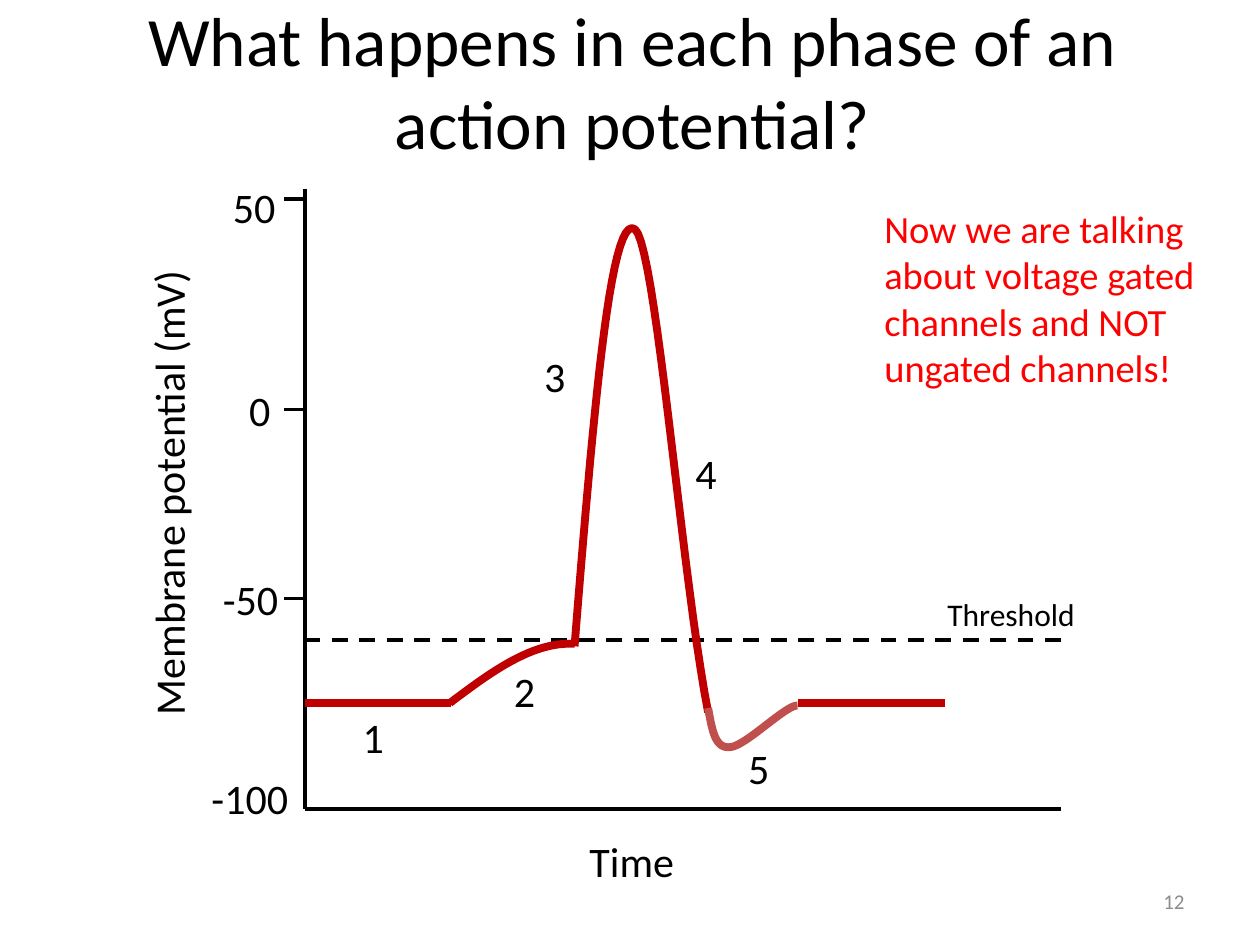
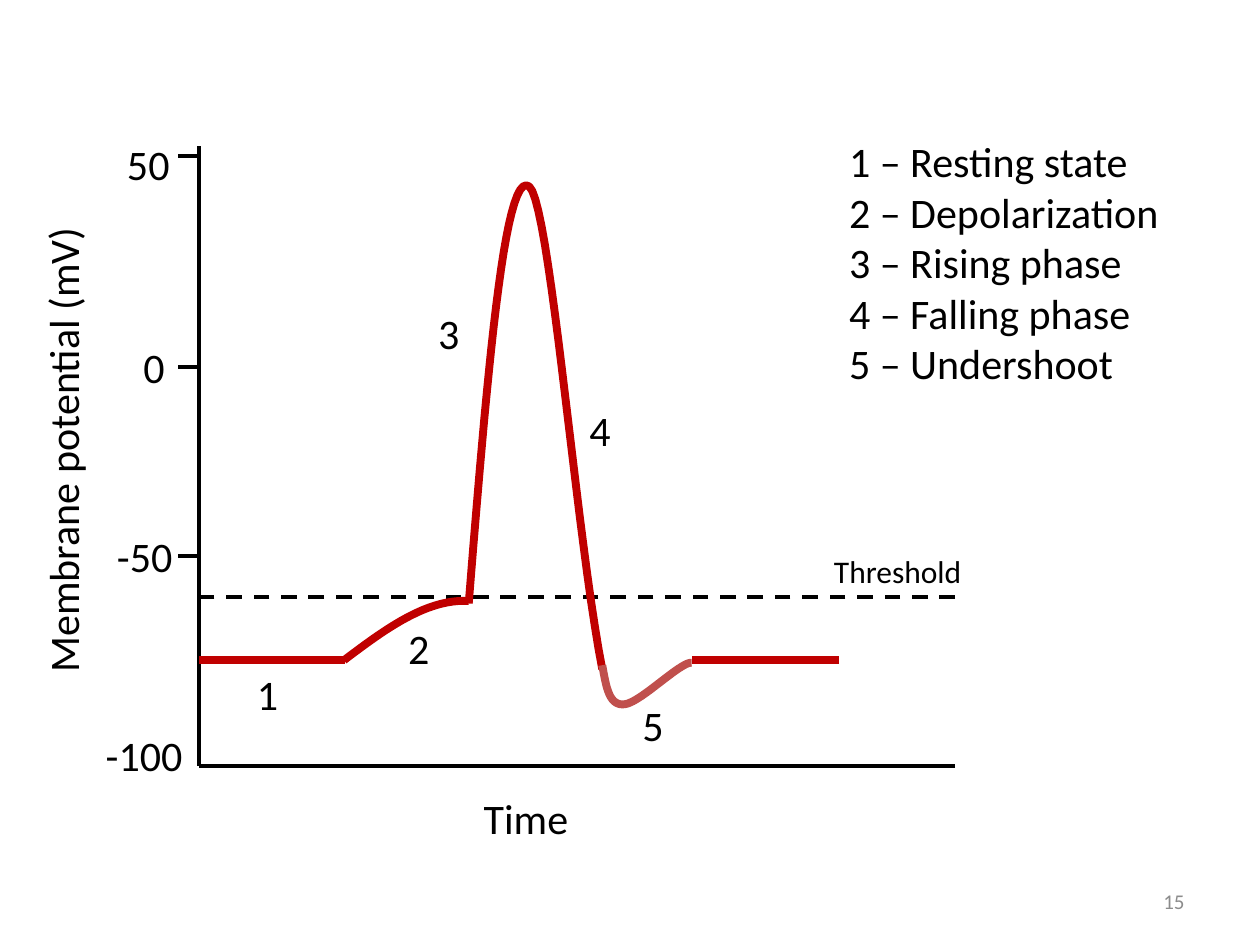
from pptx import Presentation
from pptx.dml.color import RGBColor
from pptx.enum.dml import MSO_LINE
from pptx.enum.shapes import MSO_CONNECTOR, MSO_SHAPE
from pptx.enum.text import MSO_ANCHOR, MSO_AUTO_SIZE, PP_ALIGN
from pptx.oxml.xmlchemy import OxmlElement
from pptx.util import Inches, Pt

BLACK = RGBColor(0x00, 0x00, 0x00)
WHITE = RGBColor(0xFF, 0xFF, 0xFF)
GRAY = RGBColor(0x8C, 0x8C, 0x8C)
RED = RGBColor(0xFF, 0x00, 0x00)
DARK_RED = RGBColor(0xC0, 0x00, 0x00)
SOFT_RED = RGBColor(0xC0, 0x50, 0x4D)
FONT = "Calibri"
AXIS_WIDTH, CURVE_WIDTH = 2.25, 4.5
CURVE_STEPS = 24

# Graph geometry in inches, measured from the corner of the axes
AXIS_LENGTH, AXIS_HEIGHT, TICK = 6, 4.92, 0.17
RESTING_Y, THRESHOLD_Y = -0.84, -1.34
TICKS = [-1.67, -3.17, -4.84]
SCALE_LABELS = [("-100", -0.84, -0.34, 0.82), ("-50", -0.75, -1.92, 0.65),
                ("0", -0.54, -3.42, 0.37), ("50", -0.67, -5.03, 0.54)]
PHASE_LABELS = [("1", 0.36, -0.82), ("2", 1.56, -1.19), ("3", 1.8, -3.69),
                ("4", 3, -2.92), ("5", 3.42, -0.58)]

# Bezier curves: a start point, then three points for each segment
DEPOLARIZATION = [(1.15, -0.84), (1.48, -1.09), (1.81, -1.33), (2.14, -1.31)]
SPIKE = [(2.14, -1.29), (2.28, -3.02), (2.42, -4.75), (2.62, -4.6),
         (2.81, -4.45), (3.05, -1.03), (3.29, -0.42)]
UNDERSHOOT = [(3.2, -0.8), (3.23, -0.64), (3.25, -0.48), (3.37, -0.49),
              (3.49, -0.49), (3.82, -0.83), (3.91, -0.82)]


def bezier_points(points):
    """Return points along a chain of cubic Bezier segments."""
    result = [points[0]]
    for i in range(0, len(points) - 1, 3):
        segment = points[i:i + 4]
        for step in range(1, CURVE_STEPS + 1):
            t = step / CURVE_STEPS
            weights = ((1 - t) ** 3, 3 * t * (1 - t) ** 2, 3 * t * t * (1 - t), t ** 3)
            result.append(tuple(sum(w * pt[axis] for w, pt in zip(weights, segment))
                                for axis in (0, 1)))
    return result


class Deck:
    def __init__(self):
        self.prs = Presentation()
        self.prs.slide_width, self.prs.slide_height = Inches(10), Inches(7.5)
        self.s = None
        self.origin = (0, 0)

    def new_slide(self, number):
        self.s = self.prs.slides.add_slide(self.prs.slide_layouts[6])
        self.origin = (0, 0)
        self.text(str(number), 7.17, 6.95, 2.33, 0.4, size=12, color=GRAY,
                  align=PP_ALIGN.RIGHT, anchor=MSO_ANCHOR.MIDDLE, wrap=True)

    def place(self, x, y):
        return Inches(self.origin[0] + x), Inches(self.origin[1] + y)

    def text(self, text, x, y, w, h=0.5, size=24, color=BLACK, align=PP_ALIGN.LEFT,
             anchor=MSO_ANCHOR.TOP, wrap=False, rotation=0):
        sp = self.s.shapes.add_textbox(*self.place(x, y), Inches(w), Inches(h))
        sp.rotation = rotation
        tf = sp.text_frame
        tf.word_wrap = wrap
        tf.auto_size = MSO_AUTO_SIZE.NONE if wrap else MSO_AUTO_SIZE.SHAPE_TO_FIT_TEXT
        tf.vertical_anchor = anchor
        tf.text = text
        for p in tf.paragraphs:
            p.alignment = align
            for r in p.runs:
                r.font.name, r.font.size = FONT, Pt(size)
                r.font.color.rgb = color

    def title(self, text):
        self.text(text, 0.52, 0.01, 9, 1.25, size=39.6, align=PP_ALIGN.CENTER,
                  anchor=MSO_ANCHOR.MIDDLE, wrap=True)

    def line(self, x1, y1, x2, y2, color=BLACK, width=AXIS_WIDTH, dash=None):
        sp = self.s.shapes.add_connector(MSO_CONNECTOR.STRAIGHT,
                                         *self.place(x1, y1), *self.place(x2, y2))
        sp.line.color.rgb = color
        sp.line.width = Pt(width)
        if dash:
            sp.line.dash_style = dash
        sp._element.spPr.append(OxmlElement("a:effectLst"))

    def curve(self, points, color=DARK_RED):
        start, *rest = [self.place(x, y) for x, y in bezier_points(points)]
        builder = self.s.shapes.build_freeform(*start)
        builder.add_line_segments(rest, close=False)
        sp = builder.convert_to_shape()
        sp.shadow.inherit = False
        sp.fill.background()
        sp.line.color.rgb = color
        sp.line.width = Pt(CURVE_WIDTH)

    def box(self, x, y, w, h, color):
        sp = self.s.shapes.add_shape(MSO_SHAPE.RECTANGLE, *self.place(x, y),
                                     Inches(w), Inches(h))
        sp.shadow.inherit = False
        sp.fill.solid()
        sp.fill.fore_color.rgb = color
        sp.line.color.rgb = color
        sp.line.width = Pt(2)

    def action_potential(self, left, bottom, threshold_label_x):
        self.origin = (left, bottom)

        # Axes, ticks and threshold
        self.line(0, -AXIS_HEIGHT, 0, 0)
        self.line(AXIS_LENGTH, 0, 0, 0)
        self.line(AXIS_LENGTH, THRESHOLD_Y, 0, THRESHOLD_Y, dash=MSO_LINE.DASH)
        for y in TICKS:
            self.line(0, y, -TICK, y)

        # Axis labels
        self.text("Time", 2.16, 0.16, 0.88)
        self.text("Membrane potential (mV)", -2.97, -2.78, 3.77, rotation=270)
        for label, x, y, w in SCALE_LABELS:
            self.text(label, x, y, w)

        # Membrane potential, with the end of the spike masked by the undershoot
        self.line(1.16, RESTING_Y, 0, RESTING_Y, DARK_RED, CURVE_WIDTH)
        self.curve(DEPOLARIZATION)
        self.curve(SPIKE)
        self.box(3, -0.75, 0.5, 0.5, WHITE)
        self.line(5.08, RESTING_Y, 3.91, RESTING_Y, DARK_RED, CURVE_WIDTH)
        self.curve(UNDERSHOOT, SOFT_RED)

        # Phase numbers and threshold label
        for label, x, y in PHASE_LABELS:
            self.text(label, x, y, 0.37)
        self.text("Threshold", threshold_label_x, -1.75, 1.22, 0.4, size=18)
        self.origin = (0, 0)


def main():
    deck = Deck()

    # Question slide
    deck.new_slide(12)
    deck.title("What happens in each phase of an action potential?")
    deck.action_potential(2.42, 6.42, threshold_label_x=5)
    deck.text("Now we are talking about voltage gated channels and NOT ungated channels!",
              6.92, 1.58, 2.75, 1.58, size=22, color=RED, wrap=True)

    # Answer slide
    deck.new_slide(15)
    deck.action_potential(1.58, 6.08, threshold_label_x=4.94)
    phases = ["Resting state", "Depolarization", "Rising phase", "Falling phase",
              "Undershoot"]
    deck.text("\n".join(f"{n} – {phase}" for n, phase in enumerate(phases, 1)),
              6.64, 1.03, 2.68, 2.12)

    deck.prs.save("out.pptx")


if __name__ == "__main__":
    main()
